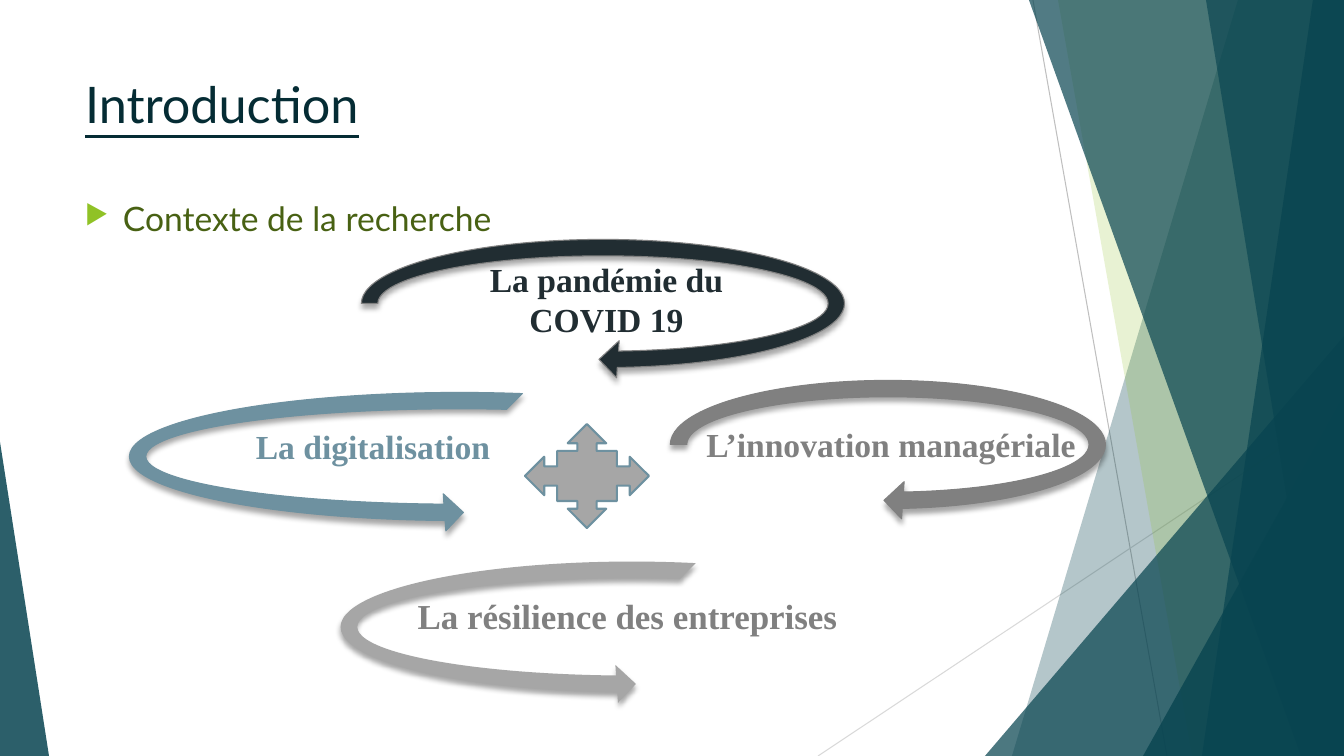
"""Build the introduction slide: four circling arrows of research context on a faceted background."""
from dataclasses import dataclass

import pptx
import pptx.dml.color
import pptx.enum.shapes
import pptx.enum.text
import pptx.oxml
import pptx.oxml.ns
import pptx.util
from lxml import etree


@dataclass(frozen=True)
class Theme:
    """Colours, fonts and type sizes."""
    teal: str = "084450"
    lime: str = "90C226"
    title: str = "052C34"
    olive: str = "486113"
    night: str = "212D32"
    steel: str = "6E91A0"
    gray: str = "808080"
    silver: str = "A6A6A6"
    rule: str = "BFBFBF"
    pale_rule: str = "D9D9D9"
    sans: str = "Lato"
    serif: str = "Times New Roman"
    title_size: int = 36
    body_size: int = 24
    large_size: int = 25


THEME = Theme()
SHAPES = pptx.enum.shapes.MSO_SHAPE
ALIGN = pptx.enum.text.PP_ALIGN
qn = pptx.oxml.ns.qn
PX = 914400 / 100.8
WIDTH, HEIGHT = 1344, 756

TITLE = ("Introduction", (75, 68, 948, 92))
BULLET = ("Contexte de la recherche", (75, 193, 1212, 536))
RULES = [((1033, 0), (1167, 756), THEME.rule), ((1344, 406), (818, 756), THEME.pale_rule)]
BANDS_BEHIND = [(1238, 1012, THEME.teal, 30), (1058, 1192, THEME.lime, 20)]
BANDS_FRONT = [(1029, 1301, THEME.teal, 70), (1313, 1202, THEME.teal, 70),
               (1206, 1329, THEME.teal, 65)]
TRIANGLE_BEHIND = ((985, 336, 359, 420), 1, 72)
TRIANGLES_FRONT = [((1143, 396, 201, 360), 1, 80), ((0, 442, 49, 314), 0, 85)]
LABELS = [
    ("L’innovation managériale", (674, 419, 434, 50), THEME.body_size, THEME.gray),
    ("La résilience des entreprises", (271, 590, 713, 52), THEME.large_size, THEME.gray),
    ("La pandémie du COVID 19", (476, 254, 261, 92), THEME.body_size, THEME.night),
    ("La digitalisation", (207, 421, 332, 50), THEME.body_size, THEME.steel),
]
RIGHT_TURN = (SHAPES.CIRCULAR_ARROW, (0.11, 11.42, 45, 108, 0.125))
LEFT_TURN = (SHAPES.LEFT_CIRCULAR_ARROW, (0.11, 11.42, 63, 189, 0.125))
ARROWS = [
    (RIGHT_TURN, (351, 229, 504, 149), THEME.night, THEME.gray),
    (LEFT_TURN, (119, 382, 681, 149), THEME.steel, THEME.steel),
    (LEFT_TURN, (330, 551, 604, 152), THEME.silver, None),
    (RIGHT_TURN, (660, 370, 456, 149), THEME.gray, THEME.gray),
]
HUB = (525, 424, 124, 104)


def emu(*lengths):
    return [pptx.util.Emu(round(length * PX)) for length in lengths]


def rgb(code):
    return pptx.dml.color.RGBColor.from_string(code)


def paint(shape, fill, line=None, weight=0.75, opacity=100):
    shape.shadow.inherit = False
    shape.fill.solid()
    shape.fill.fore_color.rgb = rgb(fill)
    if opacity < 100:
        colour = shape.fill._xPr.find(qn("a:solidFill"))[0]
        etree.SubElement(colour, qn("a:alpha"), val=str(opacity * 1000))
    if line:
        shape.line.color.rgb = rgb(line)
        shape.line.width = pptx.util.Pt(weight)
    else:
        shape.line.fill.background()


def cast_shadow(shape):
    effects = shape._element.spPr.find(qn("a:effectLst"))
    shadow = etree.SubElement(effects, qn("a:outerShdw"), blurRad=str(pptx.util.Pt(4)),
                              dist=str(pptx.util.Pt(3)), dir="5400000", rotWithShape="0")
    colour = etree.SubElement(shadow, qn("a:srgbClr"), val="000000")
    etree.SubElement(colour, qn("a:alpha"), val="35000")


def write(box, text, font, size, colour, align=ALIGN.LEFT):
    frame = box.text_frame
    frame.word_wrap = True
    frame.vertical_anchor = pptx.enum.text.MSO_ANCHOR.TOP
    para = frame.paragraphs[0]
    para.text = text
    para.alignment = align
    para.font.name = font
    para.font.size = pptx.util.Pt(size)
    para.font.color.rgb = rgb(colour)
    return para


def add_rule(page, start, end, colour):
    rule = page.shapes.add_connector(pptx.enum.shapes.MSO_CONNECTOR.STRAIGHT,
                                     *emu(*start, *end))
    rule.line.color.rgb = rgb(colour)
    rule.line.width = pptx.util.Pt(0.75)
    etree.SubElement(rule._element.spPr, qn("a:effectLst"))


def add_band(page, top, bottom, colour, opacity):
    outline = page.shapes.build_freeform(top, 0, scale=PX)
    outline.add_line_segments([(WIDTH, 0), (WIDTH, HEIGHT), (bottom, HEIGHT)], close=True)
    paint(outline.convert_to_shape(), colour, opacity=opacity)


def add_triangle(page, place, apex, opacity):
    triangle = page.shapes.add_shape(SHAPES.ISOSCELES_TRIANGLE, *emu(*place))
    triangle.adjustments[0] = apex
    paint(triangle, THEME.teal, opacity=opacity)


def add_background(page):
    for rule in RULES:
        add_rule(page, *rule)
    for band in BANDS_BEHIND:
        add_band(page, *band)
    add_triangle(page, *TRIANGLE_BEHIND)
    for band in BANDS_FRONT:
        add_band(page, *band)
    for triangle in TRIANGLES_FRONT:
        add_triangle(page, *triangle)


def add_headings(page):
    text, place = TITLE
    title = page.shapes.title
    title.left, title.top, title.width, title.height = emu(*place)
    write(title, text, THEME.sans, THEME.title_size, THEME.title).font.underline = True

    text, place = BULLET
    body = page.shapes.add_textbox(*emu(*place))
    para = write(body, text, THEME.sans, THEME.body_size, THEME.olive)
    para.space_before = pptx.util.Pt(10)
    settings = para._p.get_or_add_pPr()
    indent = emu(38)[0]
    settings.set("marL", str(indent))
    settings.set("indent", str(-indent))
    namespace = pptx.oxml.ns.nsdecls("a")
    marks = [f'<a:buClr {namespace}><a:srgbClr val="{THEME.lime}"/></a:buClr>',
             f'<a:buSzPct {namespace} val="80000"/>',
             f'<a:buChar {namespace} char="▶"/>']
    defaults = settings.find(qn("a:defRPr"))
    for mark in marks:
        defaults.addprevious(pptx.oxml.parse_xml(mark))


def add_context(page):
    for text, place, size, colour in LABELS:
        box = page.shapes.add_textbox(*emu(*place))
        write(box, text, THEME.serif, size, colour, ALIGN.CENTER).font.bold = True
    for (kind, turns), place, fill, line in ARROWS:
        arrow = page.shapes.add_shape(kind, *emu(*place))
        for index, turn in enumerate(turns):
            arrow.adjustments[index] = turn
        paint(arrow, fill, line)
        cast_shadow(arrow)
    hub = page.shapes.add_shape(SHAPES.QUAD_ARROW_CALLOUT, *emu(*HUB))
    paint(hub, THEME.silver, THEME.steel, 1.5)


def main():
    deck = pptx.Presentation()
    deck.slide_width, deck.slide_height = emu(WIDTH, HEIGHT)
    page = deck.slides.add_slide(deck.slide_layouts[5])
    add_background(page)
    add_headings(page)
    add_context(page)
    deck.save("out.pptx")


if __name__ == "__main__":
    main()
